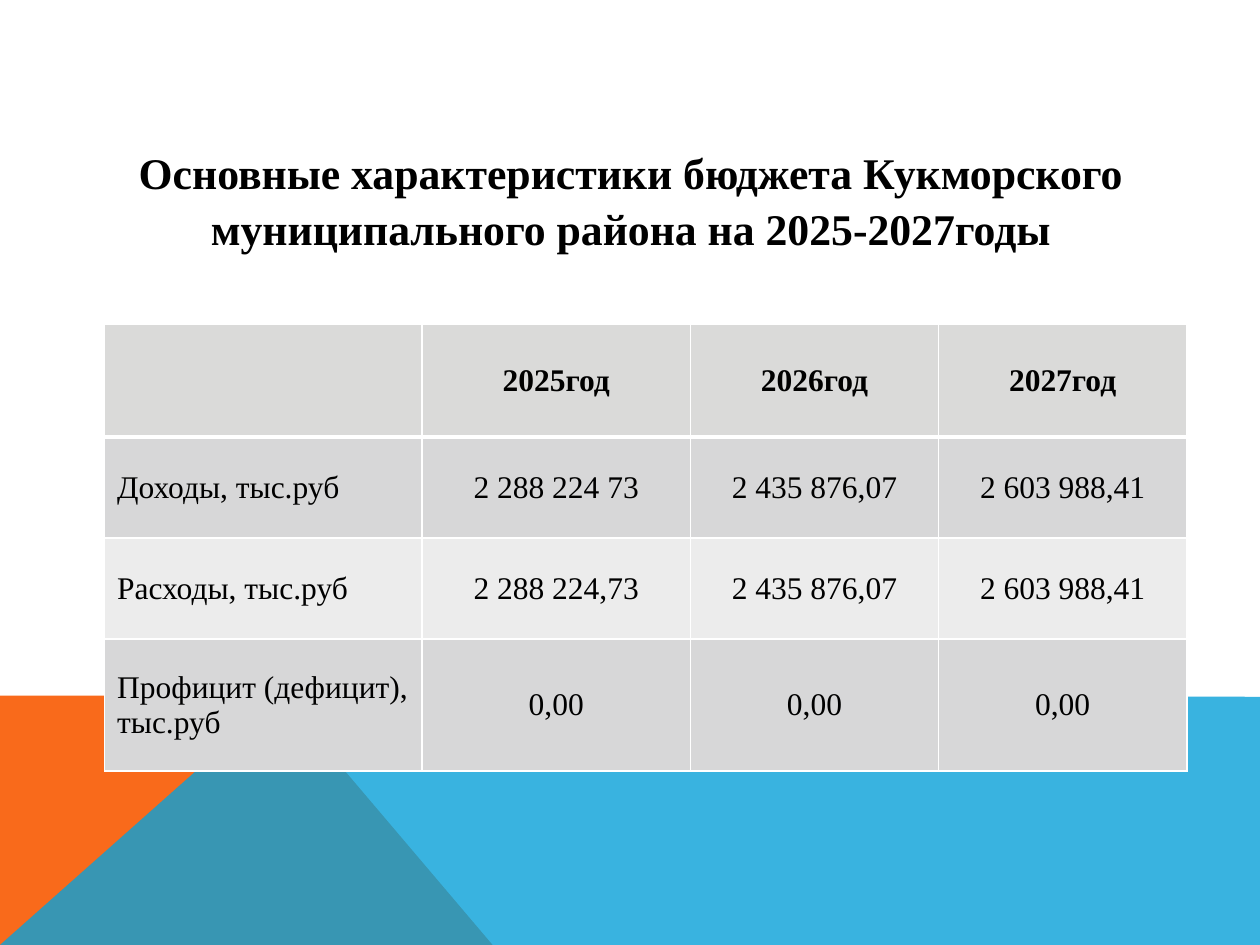
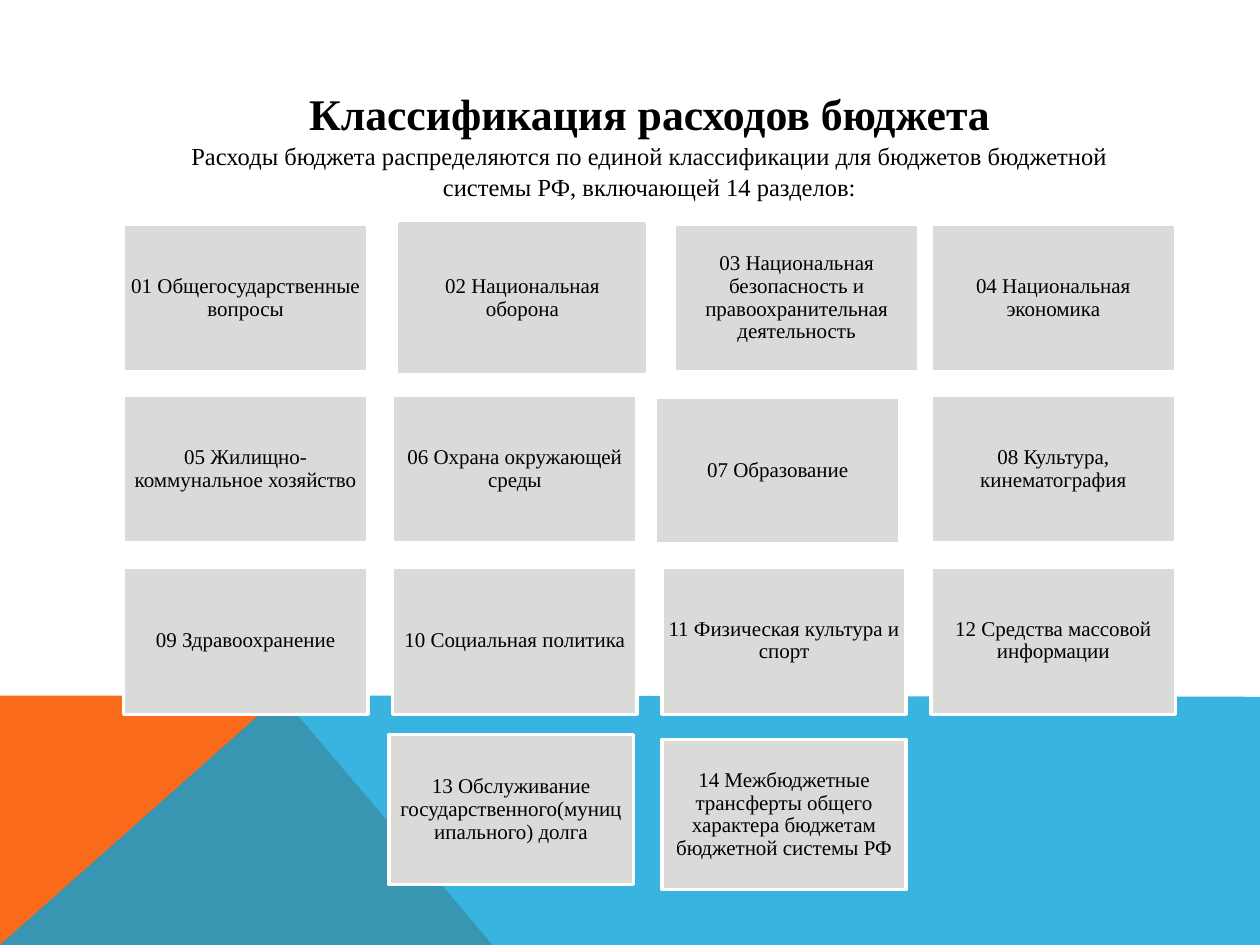
from collections import namedtuple
from dataclasses import dataclass
from itertools import product
from lxml.etree import SubElement
from pptx import Presentation
from pptx.dml.color import RGBColor
from pptx.enum.shapes import MSO_SHAPE
from pptx.enum.text import MSO_ANCHOR, PP_ALIGN
from pptx.oxml.ns import qn
from pptx.util import Inches, Pt

Box = namedtuple("Box", "left top width height")


@dataclass(frozen=True)
class Theme:
    """Colours, font and type sizes of the deck."""
    font: str = "Times New Roman"
    ink: str = "000000"
    white: str = "FFFFFF"
    grey: str = "DADAD9"
    dark: str = "D7D7D8"
    pale: str = "ECECEC"
    orange: str = "F96A1B"
    blue: str = "08A1D9"
    head: int = 25
    cell: int = 18
    lead: int = 14
    card: int = 12


THEME = Theme()
PAGE = Box(0, 0, 10, 7.5)
BAND = Box(0, 5.52, 10, 1.98)
ROWS = [
    ["", "2025год", "2026год", "2027год"],
    ["Доходы, тыс.руб", "2 288 224 73", "2 435 876,07", "2 603 988,41"],
    ["Расходы, тыс.руб", "2 288 224,73", "2 435 876,07", "2 603 988,41"],
    ["Профицит (дефицит), тыс.руб", "0,00", "0,00", "0,00"],
]
CARDS = [
    "01 Общегосударственные вопросы",
    "02 Национальная оборона",
    "03 Национальная безопасность и правоохранительная деятельность",
    "04 Национальная экономика",
    "05 Жилищно-коммунальное хозяйство",
    "06 Охрана окружающей среды",
    "07 Образование",
    "08 Культура, кинематография",
    "09 Здравоохранение",
    "10 Социальная политика",
    "11 Физическая культура и спорт",
    "12 Средства массовой информации",
    "13 Обслуживание государственного(муниципального) долга",
    "14 Межбюджетные трансферты общего характера бюджетам бюджетной системы РФ",
]
SHIFTS = {1: (0.06, 0), 2: (0.1, 0), 6: (-0.05, 0.01),
          12: (-0.03, -0.03), 13: (0, 0.01)}


def paint(fill, tone):
    """Give a fill one solid colour."""
    fill.solid()
    fill.fore_color.rgb = RGBColor.from_string(tone)


def write(par, text, size, bold=False, align=PP_ALIGN.CENTER):
    """Add one styled run to a paragraph."""
    par.alignment = align
    run = par.add_run()
    run.text = text
    run.font.name = THEME.font
    run.font.size = Pt(size)
    run.font.bold = bold
    run.font.color.rgb = RGBColor.from_string(THEME.ink)


def place(box):
    """Turn a box into slide lengths."""
    return [Inches(side) for side in box]


def draw_patch(slide, box, points, tone, alpha=100):
    """Draw a closed outline whose points are shares of the box."""
    spots = [(Inches(box.left + x * box.width), Inches(box.top + y * box.height))
             for x, y in points]
    path = slide.shapes.build_freeform(*spots[0])
    path.add_line_segments(spots[1:], close=True)
    shape = path.convert_to_shape()
    shape.shadow.inherit = False
    shape.line.fill.background()
    paint(shape.fill, tone)
    if alpha < 100:
        color = shape.fill._xPr.find(qn("a:solidFill"))[0]
        SubElement(color, qn("a:alpha"), val=str(alpha * 1000))


def draw_band(slide, box):
    """Draw the two overlapping patches at the foot."""
    peak = (0.223, 0)
    draw_patch(slide, box, [(0, 1), (0, 0), peak, (0.391, 1)], THEME.orange)
    draw_patch(slide, box, [(0, 1), peak, (1, 0.005), (1, 1)], THEME.blue, 80)


def draw_title(slide, box, lines, inset):
    """Place the centred heading lines in a box."""
    frame = slide.shapes.add_textbox(*place(box)).text_frame
    frame.word_wrap = True
    frame.margin_top = Inches(inset)
    for index, line in enumerate(lines):
        par = frame.add_paragraph() if index else frame.paragraphs[0]
        par.line_spacing = 1.05
        write(par, *line)


def rule_cell(cell, first):
    """Rule a cell in white, thicker under the header."""
    props = cell._tc.get_or_add_tcPr()
    for side in "LRTB":
        thick = first and side == "B"
        line = SubElement(props, qn(f"a:ln{side}"), w=str(Pt(3 if thick else 1)))
        fill = SubElement(line, qn("a:solidFill"))
        SubElement(fill, qn("a:srgbClr"), val=THEME.white)


def draw_table(slide, box, rows, cols, highs):
    """Fill the box with a table, its columns and rows given as shares."""
    table = slide.shapes.add_table(len(rows), len(cols), *place(box)).table
    for column, share in zip(table.columns, cols):
        column.width = Inches(box.width * share)
    for row, share in zip(table.rows, highs):
        row.height = Inches(box.height * share)
    for r, c in product(range(len(rows)), range(len(cols))):
        cell = table.cell(r, c)
        rule_cell(cell, r == 0)
        tone = THEME.dark if r % 2 else THEME.pale
        paint(cell.fill, tone if r else THEME.grey)
        cell.vertical_anchor = MSO_ANCHOR.MIDDLE
        if rows[r][c]:
            align = PP_ALIGN.CENTER if c else PP_ALIGN.LEFT
            write(cell.text_frame.paragraphs[0], rows[r][c], THEME.cell,
                  r == 0, align)


def draw_card(slide, box, text, edge):
    """Draw one labelled card."""
    card = slide.shapes.add_shape(MSO_SHAPE.RECTANGLE, *place(box))
    card.shadow.inherit = False
    paint(card.fill, THEME.grey)
    paint(card.line.fill, edge)
    card.line.width = Pt(2)
    frame = card.text_frame
    frame.word_wrap = True
    frame.vertical_anchor = MSO_ANCHOR.MIDDLE
    frame.margin_left = frame.margin_right = Inches(0.05)
    frame.margin_top = frame.margin_bottom = Inches(0.05)
    par = frame.paragraphs[0]
    par.line_spacing = 0.9
    write(par, text, THEME.card)


def draw_cards(slide, box, cards, cols=4, rows=4):
    """Lay cards on a grid and centre the short last row."""
    wide, high = 1.94, 1.17
    across = (box.width - wide) / (cols - 1)
    down = (box.height - high) / (rows - 1)
    spare = (cols * rows - len(cards)) // 2
    for index, text in enumerate(cards):
        row, col = divmod(index, cols)
        last = row == rows - 1
        dx, dy = SHIFTS.get(index, (0, 0))
        left = box.left + (col + spare * last) * across + dx
        top = box.top + row * down + dy
        edge = THEME.grey if index == 1 else THEME.white
        draw_card(slide, Box(left, top, wide, high + 0.02 * last), text, edge)


def add_page(deck):
    """Add a blank slide with the shared band."""
    slide = deck.slides.add_slide(deck.slide_layouts[6])
    draw_band(slide, BAND)
    return slide


def add_budget(deck):
    """Build the slide of budget totals."""
    slide = add_page(deck)
    draw_table(slide, Box(0.83, 2.57, 8.59, 3.55), ROWS,
               [share / 8.59 for share in (2.52, 2.13, 1.97, 1.97)],
               [share / 3.55 for share in (0.9, 0.8, 0.8, 1.05)])
    draw_title(slide, Box(0.83, 0.76, 8.35, 1.58), [
        ("Основные характеристики бюджета Кукморского муниципального "
         "района на 2025-2027годы", THEME.head, True)], 0.38)


def add_classes(deck):
    """Build the slide of spending classes."""
    slide = add_page(deck)
    draw_cards(slide, Box(0.98, 1.78, 8.35, 5.25), CARDS)
    draw_title(slide, Box(1.06, 0.6, 8.19, 1.33), [
        ("Классификация расходов бюджета", THEME.head, True),
        ("Расходы бюджета распределяются по единой классификации для "
         "бюджетов бюджетной системы РФ, включающей 14 разделов:",
         THEME.lead)], 0.07)


def main():
    """Build and save the deck."""
    deck = Presentation()
    deck.slide_width = Inches(PAGE.width)
    deck.slide_height = Inches(PAGE.height)
    add_budget(deck)
    add_classes(deck)
    deck.save("out.pptx")


if __name__ == "__main__":
    main()
